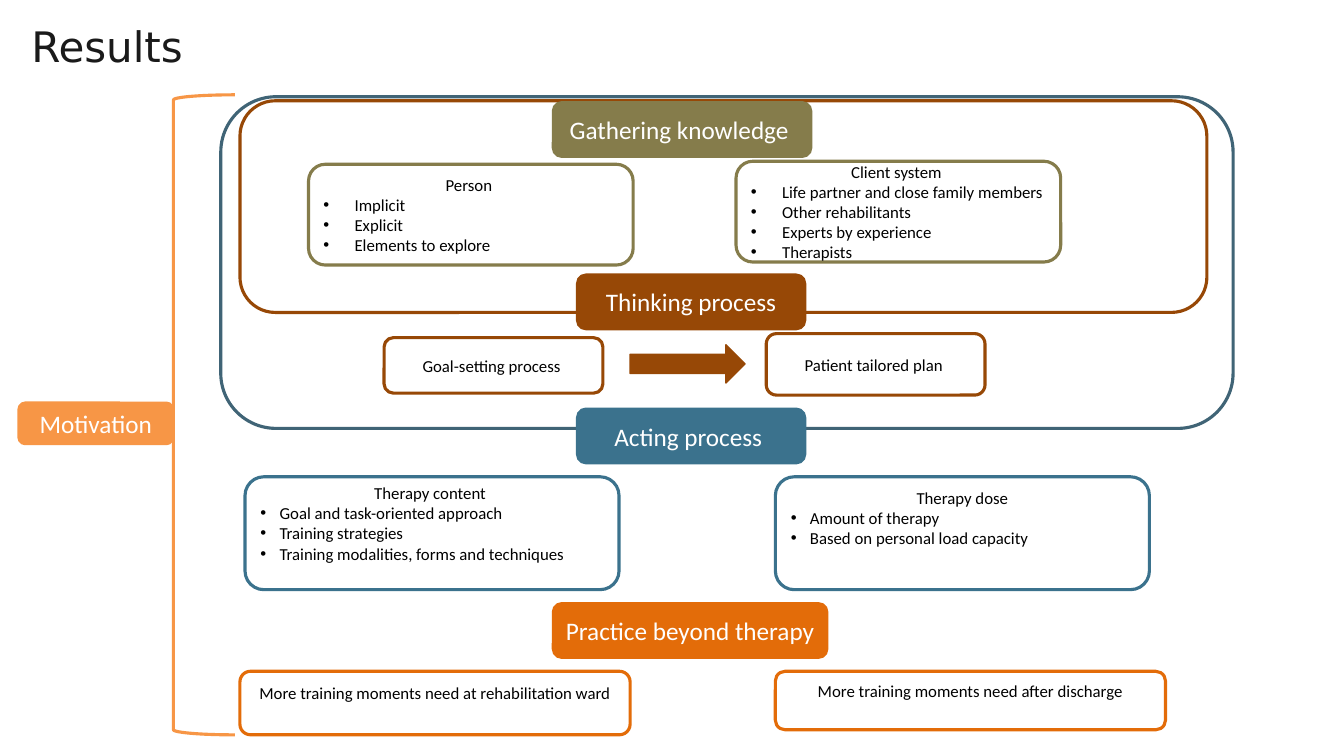
from lxml.etree import SubElement
from pptx import Presentation
from pptx.dml.color import RGBColor
from pptx.enum.shapes import MSO_SHAPE
from pptx.enum.text import MSO_ANCHOR, PP_ALIGN
from pptx.oxml.ns import qn
from pptx.util import Pt

EMU_PER_PX = 9144  # 100 px to the inch

WHITE = RGBColor(0xFF, 0xFF, 0xFF)
BLACK = RGBColor(0x00, 0x00, 0x00)
INK = RGBColor(0x1A, 0x1A, 0x1A)
OLIVE = RGBColor(0x85, 0x7C, 0x4B)
BROWN = RGBColor(0x97, 0x48, 0x06)
ORANGE = RGBColor(0xE3, 0x6C, 0x09)
LIGHT_ORANGE = RGBColor(0xF7, 0x96, 0x46)
TEAL = RGBColor(0x3B, 0x72, 0x8D)
SLATE = RGBColor(0x40, 0x64, 0x76)

HEADINGS = [
    ("Gathering knowledge ", (548, 101, 257, 55), OLIVE),
    ("Motivation", (18, 399, 154, 42), LIGHT_ORANGE),
    ("Thinking process", (572, 272, 227, 55), BROWN),
    ("Acting process ", (572, 405, 227, 55), TEAL),
    ("Practice beyond therapy ", (548, 598, 273, 55), ORANGE),
]

# heading, bullets, box, line colour, text format
CARDS = [
    ("Person ", ["Implicit", "Explicit", "Elements to explore"],
     (306, 163, 322, 100), OLIVE, {"indent": 31}),
    ("Client system ", ["Life partner and close family members", "Other rehabilitants",
                        "Experts by experience", "Therapists"],
     (730, 160, 322, 100), OLIVE, {"indent": 31}),
    ("Goal-setting process ", [], (381, 335, 217, 55), BROWN, {}),
    ("Patient tailored plan ", [], (760, 331, 217, 61), BROWN, {}),
    ("Therapy content ", ["Goal and task-oriented approach", "Training strategies",
                          "Training modalities, forms and techniques"],
     (243, 473, 371, 112), TEAL, {"bottom": 25}),
    ("Therapy dose", ["Amount of therapy", "Based on personal load capacity"],
     (769, 473, 371, 112), TEAL, {"anchor": MSO_ANCHOR.TOP}),
    ("More training moments need at rehabilitation ward", [],
     (238, 666, 387, 63), ORANGE, {"bottom": 25}),
    ("More training moments need after discharge", [],
     (769, 666, 387, 58), ORANGE, {"bottom": 25}),
]


def px(n):
    return n * EMU_PER_PX


def set_format(obj, values):
    for name, value in values.items():
        setattr(obj, name, value)


def add_text(p, text, size, color, font="Calibri"):
    r = p.add_run()
    r.text = text
    set_format(r.font, {"name": font, "size": Pt(size)})
    r.font.color.rgb = color


def add_bullet(p, indent):
    p.alignment = PP_ALIGN.LEFT
    pPr = p._p.get_or_add_pPr()
    pPr.set("marL", str(px(indent)))
    pPr.set("indent", str(-px(indent)))
    SubElement(SubElement(pPr, qn("a:buClr")), qn("a:srgbClr")).set("val", str(BLACK))
    SubElement(pPr, qn("a:buFont")).set("typeface", "Arial")
    SubElement(pPr, qn("a:buChar")).set("char", "•")


def add_box(s, kind, box, line, width=2.25, fill=None):
    """Add a preset shape; without a fill only its outline shows."""
    sp = s.shapes.add_shape(kind, *map(px, box))
    sp.shadow.inherit = False
    if fill is None:
        sp.fill.background()
    else:
        sp.fill.solid()
        sp.fill.fore_color.rgb = fill
    sp.line.color.rgb = line
    sp.line.width = Pt(width)
    return sp


def add_heading(s, text, box, color):
    sp = add_box(s, MSO_SHAPE.ROUNDED_RECTANGLE, box, color, 1, color)
    tf = sp.text_frame
    set_format(tf, {"word_wrap": True, "vertical_anchor": MSO_ANCHOR.MIDDLE})
    p = tf.paragraphs[0]
    p.alignment = PP_ALIGN.CENTER
    add_text(p, text, 18, WHITE)


def add_card(s, heading, bullets, box, color, style):
    """Add an outlined box with a centred heading over its bullets."""
    tf = add_box(s, MSO_SHAPE.ROUNDED_RECTANGLE, box, color).text_frame
    set_format(tf, {
        "word_wrap": True,
        "vertical_anchor": style.get("anchor", MSO_ANCHOR.MIDDLE),
        "margin_bottom": px(style.get("bottom", 5)),
    })
    p = tf.paragraphs[0]
    p.alignment = PP_ALIGN.CENTER
    add_text(p, heading, 12, BLACK)
    for bullet in bullets:
        p = tf.add_paragraph()
        add_bullet(p, style.get("indent", 19))
        add_text(p, bullet, 12, BLACK)


def add_title(s, text):
    sp = s.shapes.title
    box = map(px, (24, 13, 1198, 67))
    set_format(sp, dict(zip(("left", "top", "width", "height"), box)))
    tf = sp.text_frame
    sides = ("left", "top", "right", "bottom")
    set_format(tf, {f"margin_{side}": px(7) for side in sides})
    set_format(tf, {"word_wrap": True, "vertical_anchor": MSO_ANCHOR.TOP})
    p = tf.paragraphs[0]
    p.alignment = PP_ALIGN.LEFT
    add_text(p, text, 30, INK, "DejaVu Sans")


def main():
    prs = Presentation()
    set_format(prs, {"slide_width": px(1333), "slide_height": px(750)})
    s = prs.slides.add_slide(prs.slide_layouts[5])
    add_title(s, "Results")

    add_box(s, MSO_SHAPE.ROUNDED_RECTANGLE, (238, 100, 959, 210), BROWN)
    add_box(s, MSO_SHAPE.ROUNDED_RECTANGLE, (219, 96, 1004, 329), SLATE)
    bracket = add_box(s, MSO_SHAPE.RIGHT_BRACKET, (172, 94, 61, 635), LIGHT_ORANGE)
    bracket.rotation = 180
    add_box(s, MSO_SHAPE.RIGHT_ARROW, (625, 342, 114, 38), BROWN, 1, BROWN)

    for card in CARDS:
        add_card(s, *card)
    for heading in HEADINGS:
        add_heading(s, *heading)

    prs.save("out.pptx")


if __name__ == "__main__":
    main()
